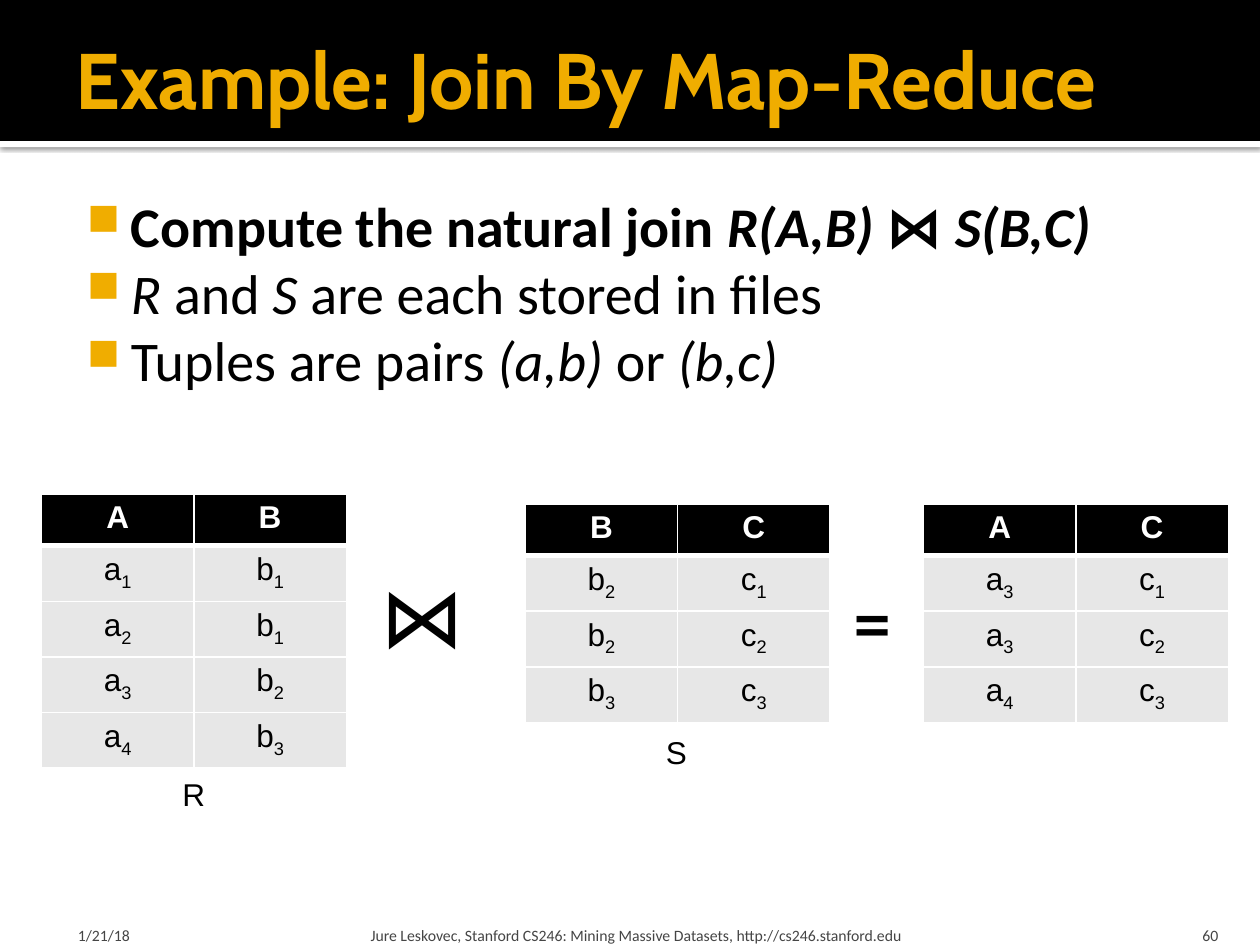
from lxml import etree
from pptx import Presentation
from pptx.dml.color import RGBColor
from pptx.enum import shapes, text
from pptx.oxml import parse_xml
from pptx.oxml.ns import nsdecls, qn
from pptx.util import Cm, Pt

GOLD, BLACK, WHITE, GREY, PALE = "F0AD00", "000000", "FFFFFF", "454545", "E7E7E7"

TITLE = "Example: Join By Map-Reduce"
BULLETS = [
    (True, [("Compute the natural join ", False), ("R(A,B) ", True), ("⋈", False), (" S(B,C)", True)]),
    (False, [("R", True), (" and ", False), ("S", True), (" are each stored in files", False)]),
    (False, [("Tuples are pairs ", False), ("(a,b)", True), (" or ", False), ("(b,c)", True)]),
]
RELATIONS = [
    {"name": "R", "left": 0.84, "top": 9.96, "row": 1.04,
     "rows": ["A B", "a1 b1", "a2 b1", "a3 b2", "a4 b3"]},
    {"name": "S", "left": 10.59, "top": 10.16, "row": 1.04,
     "rows": ["B C", "b2 c1", "b2 c2", "b3 c3"]},
    {"name": "", "left": 18.62, "top": 10.16, "row": 1.12,
     "rows": ["A C", "a3 c1", "a3 c2", "a4 c3"]},
]
OPERATORS = [("⋈", 7.42, 11.23, 1.93), ("=", 16.92, 11.28, 1.4)]
FOOTERS = [
    ("1/21/18", 1.27, 5.92, 0.3, 0.13, text.PP_ALIGN.LEFT),
    ("Jure Leskovec, Stanford CS246: Mining Massive Datasets, http://cs246.stanford.edu",
     7.34, 15.29, 0.13, 0.13, text.PP_ALIGN.LEFT),
    ("60", 22.78, 2.03, 0.25, 0.25, text.PP_ALIGN.RIGHT),
]
COLUMN, HEADER_ROW, CAPTION_GAP, CAPTION_WIDTH = 3.07, 1.04, 0.33, 0.97


def color(value):
    return RGBColor.from_string(value)


def style(font, name, size, value, bold=False):
    font.name, font.size, font.bold = name, Pt(size), bold
    font.color.rgb = color(value)


def add_band(page, top, height, value):
    band = page.shapes.add_shape(shapes.MSO_SHAPE.RECTANGLE, 0, Cm(top), Cm(25.4), Cm(height))
    band.shadow.inherit = False
    band.fill.solid()
    band.fill.fore_color.rgb = color(value)
    band.line.fill.background()
    return band


def add_shadow(shape):
    effects = shape._element.spPr.find(qn("a:effectLst"))
    effects.append(parse_xml(
        f'<a:outerShdw {nsdecls("a")} blurRad="31750" dist="10160" dir="5400000" rotWithShape="0">'
        '<a:srgbClr val="000000"><a:alpha val="60000"/></a:srgbClr></a:outerShdw>'))


def add_box(page, left, top, width, height, insets=(0.25, 0.13, 0.25, 0.13), anchor="TOP", wrap=True):
    box = page.shapes.add_textbox(Cm(left), Cm(top), Cm(width), Cm(height))
    frame = box.text_frame
    frame.word_wrap = wrap
    frame.vertical_anchor = text.MSO_ANCHOR[anchor]
    frame.margin_left, frame.margin_top, frame.margin_right, frame.margin_bottom = map(Cm, insets)
    return frame


def write(frame, words, name, size, value, bold=False, align=text.PP_ALIGN.LEFT):
    para = frame.paragraphs[0]
    para.text = words
    para.alignment = align
    style(para.font, name, size, value, bold)


def add_bullet(para):
    props = para._p.get_or_add_pPr()
    props.set("marL", str(Cm(1.22)))
    props.set("indent", str(Cm(-0.89)))
    for xml in (f'<a:buClr {nsdecls("a")}><a:srgbClr val="{GOLD}"/></a:buClr>',
                f'<a:buSzPct {nsdecls("a")} val="80000"/>',
                f'<a:buChar {nsdecls("a")} char="■"/>'):
        props.append(parse_xml(xml))


def add_bullets(page):
    frame = add_box(page, 1.27, 3.61, 22.86, 5.92, (0.15, 0.25, 0.25, 0.13))
    for index, (bold, spans) in enumerate(BULLETS):
        para = frame.add_paragraph() if index else frame.paragraphs[0]
        style(para.font, "Calibri", 32, BLACK, bold)
        add_bullet(para)
        for words, italic in spans:
            span = para.add_run()
            span.text = words
            span.font.italic = italic


def set_borders(cell, bottom):
    props = cell._tc.get_or_add_tcPr()
    for side, width in (("L", 1), ("R", 1), ("T", 1), ("B", bottom)):
        line = etree.SubElement(props, qn(f"a:ln{side}"), w=str(Pt(width)))
        fill = etree.SubElement(line, qn("a:solidFill"))
        etree.SubElement(fill, qn("a:srgbClr"), val=WHITE)


def fill_cell(cell, words, header):
    set_borders(cell, 3 if header else 1)
    cell.fill.solid()
    cell.fill.fore_color.rgb = color(BLACK if header else PALE)
    para = cell.text_frame.paragraphs[0]
    para.alignment = text.PP_ALIGN.CENTER
    style(para.font, "Arial", 18, WHITE if header else BLACK, header)
    para.add_run().text = words[0]
    if words[1:]:
        span = para.add_run()
        span.text = words[1:]
        span._r.get_or_add_rPr().set("baseline", "-25000")


def add_relation(page, relation):
    rows = [row.split() for row in relation["rows"]]
    left, top = relation["left"], relation["top"]
    width = COLUMN * len(rows[0])
    height = HEADER_ROW + relation["row"] * (len(rows) - 1)
    table = page.shapes.add_table(len(rows), len(rows[0]), Cm(left), Cm(top), Cm(width), Cm(height)).table
    table.horz_banding = False
    for r, row in enumerate(rows):
        table.rows[r].height = Cm(relation["row"] if r else HEADER_ROW)
        for c, words in enumerate(row):
            fill_cell(table.cell(r, c), words, r == 0)
    if relation["name"]:
        caption = add_box(page, left + (width - CAPTION_WIDTH) / 2, top + height + CAPTION_GAP,
                          CAPTION_WIDTH, 1.02, wrap=False)
        write(caption, relation["name"], "Arial", 18, BLACK)


def main():
    deck = Presentation()
    deck.slide_width, deck.slide_height = Cm(25.4), Cm(19.05)
    page = deck.slides.add_slide(deck.slide_layouts[6])

    add_shadow(add_band(page, 2.84, 0.13, WHITE))
    add_band(page, 0, 2.84, BLACK)
    title = add_box(page, 1.27, 0.2, 22.86, 2.74, (0.25, 0.13, 0.13, 0.13), "MIDDLE")
    write(title, TITLE, "Cabin", 45, GOLD, True)
    add_bullets(page)

    for words, left, width, inset_left, inset_right, align in FOOTERS:
        footer = add_box(page, left, 18.29, width, 0.76, (inset_left, 0.13, inset_right, 0), "BOTTOM")
        write(footer, words, "Calibri", 9, GREY, align=align)
    for relation in RELATIONS:
        add_relation(page, relation)
    for symbol, left, top, width in OPERATORS:
        write(add_box(page, left, top, width, 2.31, wrap=False), symbol, "Cabin", 48, BLACK)

    deck.save("out.pptx")


if __name__ == "__main__":
    main()
